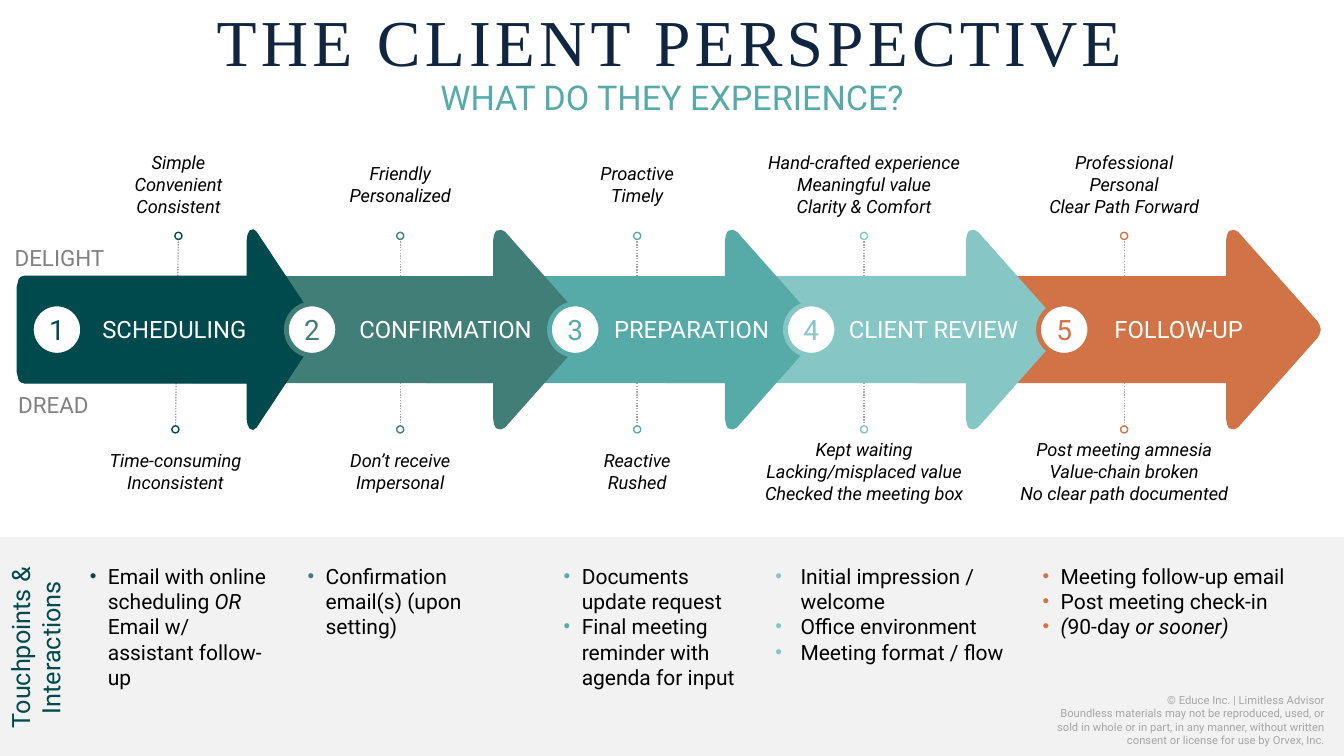
"""Build the client perspective slide: five journey arrows with feelings and touchpoints."""
from copy import deepcopy
from dataclasses import dataclass

from lxml.etree import SubElement
from pptx import Presentation
from pptx.dml.color import RGBColor
from pptx.enum.dml import MSO_LINE
from pptx.enum.shapes import MSO_CONNECTOR, MSO_SHAPE
from pptx.enum.text import MSO_ANCHOR, MSO_AUTO_SIZE, PP_ALIGN
from pptx.oxml.ns import qn
from pptx.util import Inches, Pt

TITLE = "THE CLIENT PERSPECTIVE"
SUBTITLE = "WHAT DO THEY EXPERIENCE?"
SIDE_TITLE = "Touchpoints & Interactions"
COPYRIGHT = (
    "© Educe Inc. | Limitless Advisor",
    "Boundless materials may not be reproduced, used, or sold in whole or in part, "
    "in any manner, without written consent or license for use by Orvex, Inc.",
)
STAGES = (
    dict(name="SCHEDULING", color="004A4D",
         delight=("Simple", "Convenient", "Consistent"),
         dread=("Time-consuming", "Inconsistent"),
         touchpoints=((("Email with online scheduling ", False), ("OR ", True),
                       ("Email w/ assistant follow-up", False)),)),
    dict(name="CONFIRMATION", color="417E77",
         delight=("Friendly", "Personalized"),
         dread=("Don’t receive", "Impersonal"),
         touchpoints=((("Confirmation email(s) (upon setting)", False),),)),
    dict(name="PREPARATION", color="56ABA8",
         delight=("Proactive", "Timely"),
         dread=("Reactive", "Rushed"),
         touchpoints=((("Documents update request", False),),
                      (("Final meeting reminder with agenda for input", False),))),
    dict(name="CLIENT REVIEW", color="86C6C5",
         delight=("Hand-crafted experience", "Meaningful value", "Clarity & Comfort"),
         dread=("Kept waiting", "Lacking/misplaced value", "Checked the meeting box"),
         touchpoints=((("Initial impression / welcome", False),),
                      (("Office environment", False),),
                      (("Meeting format / flow", False),))),
    dict(name="FOLLOW-UP", color="D17346",
         delight=("Professional", "Personal", "Clear Path Forward"),
         dread=("Post meeting amnesia", "Value-chain broken", "No clear path documented"),
         touchpoints=((("Meeting follow-up email", False),),
                      (("Post meeting check-in", False),),
                      (("(", True), ("90-day ", False), ("or sooner)", True)))),
)

CELL = Inches(0.01)
COLUMNS, ROWS = 1333, 750
MIDDLE_ROW = 327
BADGE, DOT = 51, 7
DELIGHT_ROW, DREAD_ROW = 183, 468
DOT_ROWS = (234, 426)
ARROWS = ((17, 315, 0.74), (184, 583, 1), (415, 813, 1), (653, 1052, 1), (902, 1310, 1))
BADGE_COLUMNS = (31, 284, 545, 779, 1030)
NAME_CENTERS = (173, 442, 686, 926, 1169)
DOT_CENTERS = ((177, 174), (397, 397), (632, 632), (857, 857), (1115, 1115))
LISTS = ((79, 204, 18), (295, 238, 18), (549, 204, 18), (759, 250, 25), (1024, 266, 18))
TAIL = ((0, -42), (2, -50), (4, -52), (7, -53))
HEAD = ((94, -53), (94, -88), (93, -94), (91, -98), (86, -99), (82, -97), (3, -8), (1, -4), (0, 0))


@dataclass(frozen=True)
class Theme:
    sans: str = "Roboto"
    serif: str = "Times New Roman"
    navy: str = "10253F"
    dark: str = "004A4D"
    teal: str = "56ABA8"
    black: str = "000000"
    white: str = "FFFFFF"
    band: str = "F2F2F2"
    gray: str = "808080"
    pale: str = "A6A6A6"
    title: float = 46.8
    subtitle: float = 24.4
    number: float = 20
    side: float = 18
    name: float = 17
    axis: float = 16
    body: float = 15
    label: float = 13
    small: float = 8


THEME = Theme()


def place(shape, left, top, width, height):
    shape.left, shape.top = round(left * CELL), round(top * CELL)
    shape.width, shape.height = round(width * CELL), round(height * CELL)


def add_span(para, text, size, color, italic=False, face=THEME.sans):
    span = para.add_run()
    span.text = text
    span.font.name, span.font.size, span.font.italic = face, Pt(size), italic
    span.font.color.rgb = RGBColor.from_string(color)
    return span


def write_lines(frame, lines, size, color, align=PP_ALIGN.CENTER, italic=False):
    for index, line in enumerate(lines):
        para = frame.add_paragraph() if index else frame.paragraphs[0]
        para.alignment = align
        add_span(para, line, size, color, italic)


def add_text(page, area, lines, size, color, wrap=False, **style):
    box = page.shapes.add_textbox(0, 0, 0, 0)
    place(box, *area)
    box.text_frame.word_wrap = wrap
    write_lines(box.text_frame, lines, size, color, **style)
    return box


def paint(shape, fill, line=None, weight=1):
    shape.shadow.inherit = False
    shape.fill.solid()
    shape.fill.fore_color.rgb = RGBColor.from_string(fill)
    if line:
        shape.line.color.rgb = RGBColor.from_string(line)
        shape.line.width = Pt(weight)
    else:
        shape.line.fill.background()


def add_preset(page, kind, area, fill, line=None, weight=1):
    shape = page.shapes.add_shape(kind, 0, 0, 0, 0)
    place(shape, *area)
    paint(shape, fill, line, weight)
    return shape


def add_leader(page, centers, color):
    ends = [round(value * CELL) for pair in zip(centers, DOT_ROWS) for value in pair]
    leader = page.shapes.add_connector(MSO_CONNECTOR.STRAIGHT, *ends)
    leader.line.color.rgb = RGBColor.from_string(THEME.pale)
    leader.line.width = Pt(1)
    leader.line.dash_style = MSO_LINE.ROUND_DOT
    SubElement(leader._element.spPr, qn("a:effectLst"))
    for center, row in zip(centers, DOT_ROWS):
        area = (center - DOT / 2, row - DOT / 2, DOT, DOT)
        add_preset(page, MSO_SHAPE.OVAL, area, THEME.white, color)


def add_label(page, center, row, lines):
    height = 10 + 22 * len(lines)
    add_text(page, (center - 120, row - height / 2, 240, height), lines,
             THEME.label, THEME.black, italic=True)


def add_arrow(page, left, tip, stretch, color, line):
    upper = [(left + x, y) for x, y in TAIL] + [(tip - x * stretch, y) for x, y in HEAD]
    outline = upper + [(x, -y) for x, y in reversed(upper[:-1])]
    points = [(x, MIDDLE_ROW + y) for x, y in outline]
    builder = page.shapes.build_freeform(*points[0], scale=float(CELL))
    builder.add_line_segments(points[1:], close=True)
    paint(builder.convert_to_shape(), color, line, 0.75)


def add_badge(page, left, number, color):
    area = (left, MIDDLE_ROW - BADGE / 2, BADGE, BADGE)
    frame = add_preset(page, MSO_SHAPE.OVAL, area, THEME.white, color, 3.5).text_frame
    frame.margin_left = frame.margin_right = frame.margin_top = frame.margin_bottom = 0
    frame.vertical_anchor, frame.word_wrap = MSO_ANCHOR.MIDDLE, False
    write_lines(frame, [str(number)], THEME.number, color)


def add_bullet(para, color, indent):
    properties = para._p.get_or_add_pPr()
    properties.set("marL", str(indent * CELL))
    properties.set("indent", str(-indent * CELL))
    SubElement(SubElement(properties, qn("a:buClr")), qn("a:srgbClr"), val=color)
    SubElement(properties, qn("a:buSzPct"), val="90000")
    SubElement(properties, qn("a:buFont"), typeface="Arial")
    SubElement(properties, qn("a:buChar"), char="•")


def fill_list(body, left, width, indent, stage):
    place(body, left, 554, width, 162)
    frame = body.text_frame
    frame.auto_size, frame.word_wrap = MSO_AUTO_SIZE.NONE, True
    for index, spans in enumerate(stage["touchpoints"]):
        para = frame.add_paragraph() if index else frame.paragraphs[0]
        add_bullet(para, stage["color"], indent)
        para.space_before = Pt(0)
        for text, italic in spans:
            add_span(para, text, THEME.body, THEME.black, italic)


def add_page(deck):
    layout = deck.slide_layouts[1]
    first = layout.placeholders[1]._element
    for index in range(2, len(STAGES) + 1):
        extra = deepcopy(first)
        extra.nvSpPr.cNvPr.set("id", str(100 + index))
        extra.nvSpPr.nvPr.find(qn("p:ph")).set("idx", str(100 + index))
        layout.shapes._spTree.append(extra)
    return deck.slides.add_slide(layout)


def fill_title(title):
    place(title, 0, -9, COLUMNS, 145)
    frame = title.text_frame
    frame.auto_size, frame.word_wrap = MSO_AUTO_SIZE.NONE, True
    frame.vertical_anchor = MSO_ANCHOR.MIDDLE
    para = frame.paragraphs[0]
    para.alignment, para.line_spacing = PP_ALIGN.CENTER, 0.9
    span = add_span(para, TITLE, THEME.title, THEME.navy, face=THEME.serif)
    span.font._element.set("spc", "300")
    para.add_line_break()
    add_span(para, SUBTITLE, THEME.subtitle, THEME.teal)


def main():
    deck = Presentation()
    deck.slide_width, deck.slide_height = COLUMNS * CELL, ROWS * CELL
    page = add_page(deck)
    title, *bodies = page.placeholders
    fill_title(title)
    band = add_preset(page, MSO_SHAPE.RECTANGLE, (0, 533, COLUMNS, ROWS - 533), THEME.band)
    page.shapes._spTree.insert(2, band._element)
    side = add_text(page, (-66, 607, 203, 71), [SIDE_TITLE], THEME.side, THEME.dark, wrap=True)
    side.rotation = 270
    add_text(page, (-48, 237, 214, 37), ["DELIGHT"], THEME.axis, THEME.gray)
    add_text(page, (-54, 383, 214, 37), ["DREAD"], THEME.axis, THEME.gray)
    for stage, centers, body, column in zip(STAGES, DOT_CENTERS, bodies, LISTS):
        fill_list(body, *column, stage)
        add_leader(page, centers, stage["color"])
        add_label(page, centers[0], DELIGHT_ROW, stage["delight"])
        add_label(page, centers[1], DREAD_ROW, stage["dread"])
    for index in reversed(range(len(STAGES))):
        color = STAGES[index]["color"]
        add_arrow(page, *ARROWS[index], color, None if index else color)
    for number, (stage, left, center) in enumerate(zip(STAGES, BADGE_COLUMNS, NAME_CENTERS), 1):
        add_badge(page, left, number, stage["color"])
        add_text(page, (center - 100, 307, 200, 39), [stage["name"]], THEME.name, THEME.white)
    add_text(page, (1027, 683, 297, 64), COPYRIGHT, THEME.small, THEME.pale,
             wrap=True, align=PP_ALIGN.RIGHT)
    deck.save("out.pptx")


if __name__ == "__main__":
    main()
